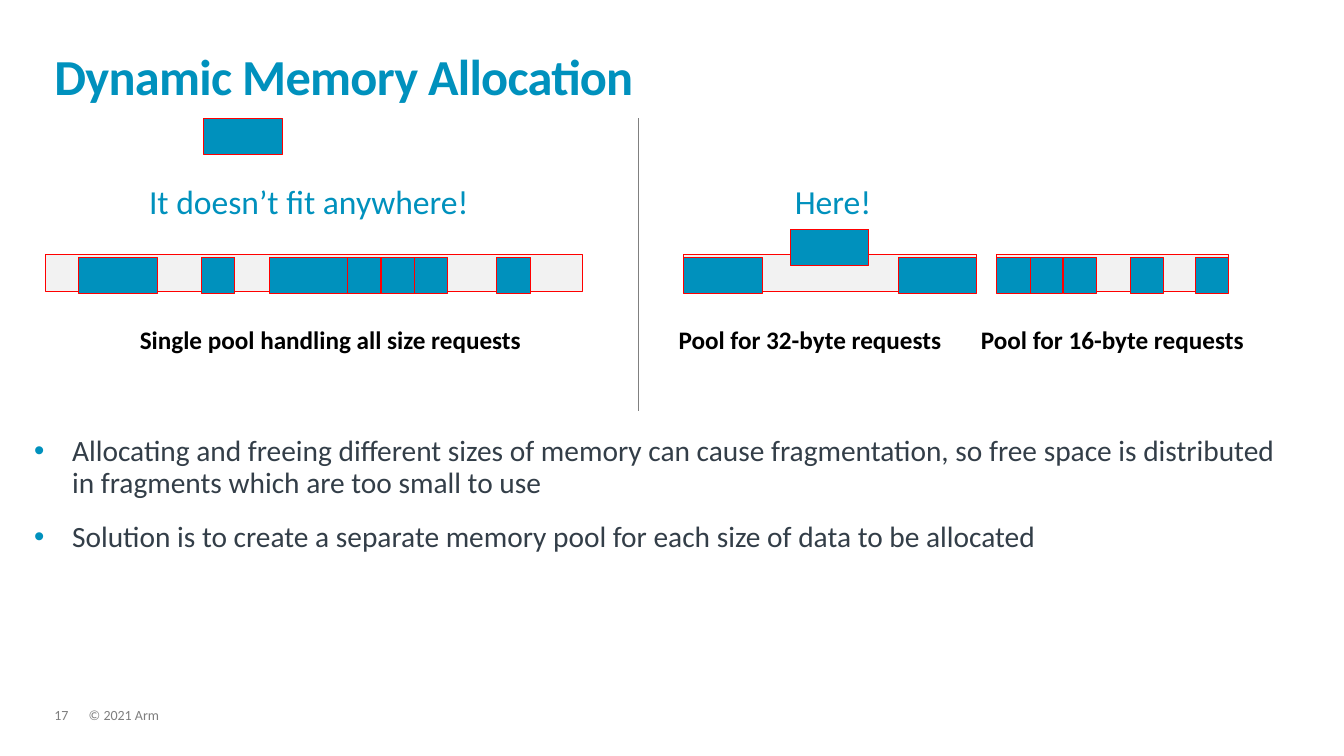
from lxml.etree import SubElement
from pptx import Presentation
from pptx.dml.color import RGBColor
from pptx.enum.shapes import MSO_CONNECTOR, MSO_SHAPE
from pptx.enum.text import MSO_ANCHOR, MSO_AUTO_SIZE, PP_ALIGN
from pptx.oxml.ns import qn
from pptx.util import Pt

COLORS = {
    "accent": "0091BD",
    "body": "333E48",
    "label": "000000",
    "footer": "7F7F7F",
    "divider": "808080",
    "free": "F2F2F2",
    "outline": "FF0000",
}
FONT = "Calibri"
POOL_TOP, BLOCK_TOP, BLOCK_HEIGHT = 182, 183.6, 26
BYTES_32, BYTES_16 = 56.2, 23.8
CAPTION_TOP, LABEL_TOP, FOOTER_TOP = 126, 228.2, 506.2


def color(name):
    return RGBColor.from_string(COLORS[name])


class MemorySlide:
    def __init__(self, slide):
        self.slide = slide
        self.shapes = slide.shapes

    def style(self, paragraph, size, color_name, bold=False, align=PP_ALIGN.LEFT):
        paragraph.alignment = align
        font = paragraph.font
        font.name, font.size, font.bold = FONT, Pt(size), bold
        font.color.rgb = color(color_name)

    def clear_insets(self, frame):
        frame.margin_left = frame.margin_right = 0
        frame.margin_top = frame.margin_bottom = 0

    def title(self, text, left, top, width, height):
        heading = self.shapes.title
        heading.left, heading.top = Pt(left), Pt(top)
        heading.width, heading.height = Pt(width), Pt(height)
        frame = heading.text_frame
        frame.text = text
        frame.auto_size = MSO_AUTO_SIZE.NONE
        frame.vertical_anchor = MSO_ANCHOR.BOTTOM
        self.clear_insets(frame)
        paragraph = frame.paragraphs[0]
        paragraph.line_spacing = 0.85
        paragraph.space_before = 0
        self.style(paragraph, 36, "accent", bold=True)
        # Character spacing in hundredths of a point
        paragraph.runs[0].font._element.set("spc", "-50")

    def text(self, text, left, top, width, height, size, color_name,
             bold=False, align=PP_ALIGN.CENTER, wrap=True):
        box = self.shapes.add_textbox(Pt(left), Pt(top), Pt(width), Pt(height))
        frame = box.text_frame
        frame.word_wrap = wrap
        frame.text = text
        self.style(frame.paragraphs[0], size, color_name, bold, align)
        return frame

    def footer(self, text, left, width):
        frame = self.text(text, left, FOOTER_TOP, width, 10.8, 10, "footer",
                          align=PP_ALIGN.LEFT)
        self.clear_insets(frame)
        frame.paragraphs[0].line_spacing = 0.9

    def bullets(self, items, left, top, width, height):
        box = self.shapes.add_textbox(Pt(left), Pt(top), Pt(width), Pt(height))
        frame = box.text_frame
        frame.word_wrap = True
        self.clear_insets(frame)
        frame.text = "\n".join(items)
        for paragraph in frame.paragraphs:
            paragraph.line_spacing = 0.9
            paragraph.space_after = Pt(16)
            properties = paragraph._p.get_or_add_pPr()
            properties.set("marL", str(Pt(27)))
            properties.set("indent", str(-Pt(27)))
            bullet_color = SubElement(properties, qn("a:buClr"))
            SubElement(bullet_color, qn("a:srgbClr"), val=COLORS["accent"])
            SubElement(properties, qn("a:buFont"), typeface="Arial")
            SubElement(properties, qn("a:buChar"), char="•")
            self.style(paragraph, 21, "body")

    def memory(self, left, top, width, fill="accent"):
        """Draw one stretch of memory, allocated unless filled as free."""
        block = self.shapes.add_shape(
            MSO_SHAPE.RECTANGLE, Pt(left), Pt(top), Pt(width), Pt(BLOCK_HEIGHT))
        block.shadow.inherit = False
        block.fill.solid()
        block.fill.fore_color.rgb = color(fill)
        block.line.color.rgb = color("outline")
        block.line.width = Pt(0.75)

    def pool(self, left, width, blocks):
        """Draw a pool; blocks are (left, width) pairs."""
        self.memory(left, POOL_TOP, width, "free")
        for block_left, block_width in blocks:
            self.memory(block_left, BLOCK_TOP, block_width)

    def divider(self, x, top, bottom):
        line = self.shapes.add_connector(
            MSO_CONNECTOR.STRAIGHT, Pt(x), Pt(top), Pt(x), Pt(bottom))
        line.line.color.rgb = color("divider")
        line.line.width = Pt(0.75)
        SubElement(line._element.spPr, qn("a:effectLst"))


def main():
    deck = Presentation()
    deck.slide_width, deck.slide_height = Pt(960), Pt(540)
    page = MemorySlide(deck.slides.add_slide(deck.slide_layouts[5]))

    page.footer("© 2021 Arm", 63.4, 657.4)
    page.footer("17", 38.9, 24.5)
    page.title("Dynamic Memory Allocation", 38.9, 23, 880.6, 52.6)
    page.bullets([
        "Allocating and freeing different sizes of memory can cause fragmentation, "
        "so free space is distributed in fragments which are too small to use",
        "Solution is to create a separate memory pool for each size of data "
        "to be allocated",
    ], 24.5, 311.8, 895, 186.5)

    shared_blocks = [(x, BYTES_32) for x in (56.2, 192.2)]
    shared_blocks += [(x, BYTES_16) for x in (248.4, 355, 272.2, 296, 144)]
    page.pool(32.4, 383.8, shared_blocks)
    page.memory(145.6, 84.4, BYTES_32)
    page.text("It doesn’t fit anywhere!", 97.9, CAPTION_TOP, 245.5, 36,
              24, "accent", wrap=False)

    page.pool(488.2, 209.6, [(x, BYTES_32) for x in (488.2, 641.6)])
    page.pool(712, 165.6,
              [(x, BYTES_16) for x in (735.4, 807.2, 759.6, 853.8, 712)])
    page.memory(564.4, 163.6, BYTES_32)
    page.text("Here!", 559.4, CAPTION_TOP, 71.3, 36, 24, "accent", wrap=False)

    for label, left, width in (
        ("Single pool handling all size requests", 82.8, 306.7),
        ("Pool for 32-byte requests", 477.4, 202.3),
        ("Pool for 16-byte requests", 693.4, 202.3),
    ):
        page.text(label, left, LABEL_TOP, width, 28.8, 18, "label", bold=True)
    page.divider(455.8, 84.4, 293.8)

    deck.save("out.pptx")


if __name__ == "__main__":
    main()
